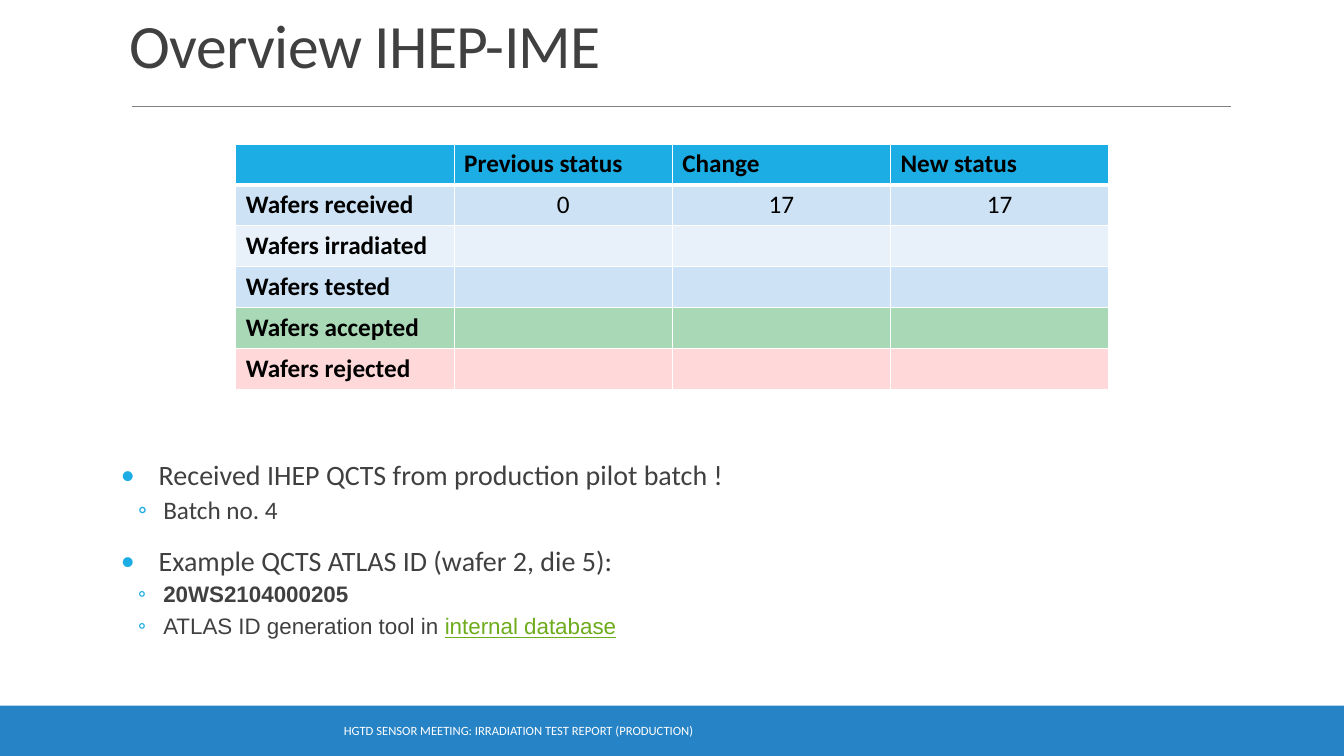
from dataclasses import dataclass

from lxml.etree import SubElement
from pptx import Presentation
from pptx.dml.color import RGBColor
from pptx.enum.shapes import MSO_CONNECTOR, MSO_SHAPE
from pptx.enum.text import MSO_ANCHOR as Anchor, PP_ALIGN as Align
from pptx.oxml.ns import qn
from pptx.util import Pt

WHITE = RGBColor(0xFF, 0xFF, 0xFF)
BLACK = RGBColor(0, 0, 0)
DARK = RGBColor(0x40, 0x40, 0x40)
GREY = RGBColor(0x80, 0x80, 0x80)
FOOTER_BLUE = RGBColor(0x26, 0x83, 0xC6)
ACCENT = RGBColor(0x1C, 0xAD, 0xE4)
BAND_DARK = RGBColor(0xCD, 0xE3, 0xF5)
BAND_LIGHT = RGBColor(0xE8, 0xF1, 0xFA)
ACCEPTED = RGBColor(0xA9, 0xD8, 0xB7)
REJECTED = RGBColor(0xFF, 0xD9, 0xD9)
LINK_GREEN = RGBColor(0x6E, 0xAC, 0x1C)


@dataclass
class Span:
    text: str
    size: float
    font: str = "Calibri"
    color: RGBColor = DARK
    bold: bool = False
    underline: bool = False


@dataclass
class BulletLevel:
    sign: str
    margin: float
    hanging: float
    before: float
    after: float


@dataclass
class Bullet:
    level: int
    spans: list[Span]


@dataclass
class StatusRow:
    texts: list[str]
    fill: RGBColor


LEVELS = [BulletLevel("•", 27, 27, 12, 2), BulletLevel("◦", 30.25, 18, 2, 4)]

BULLETS = [
    Bullet(0, [Span("Received IHEP QCTS from production pilot batch !", 20)]),
    Bullet(1, [Span("Batch no. 4", 18)]),
    Bullet(0, [Span("Example QCTS ATLAS ID (wafer 2, die 5):", 20)]),
    Bullet(1, [Span("20WS2104000205", 16, "Arial", bold=True)]),
    Bullet(1, [
        Span("ATLAS ID generation tool in ", 16, "Arial"),
        Span("internal database", 16, "Arial", LINK_GREEN, underline=True),
    ]),
]

STATUS_ROWS = [
    StatusRow(["", "Previous status", "Change", "New status"], ACCENT),
    StatusRow(["Wafers received", "0", "17", "17"], BAND_DARK),
    StatusRow(["Wafers irradiated", "", "", ""], BAND_LIGHT),
    StatusRow(["Wafers tested", "", "", ""], BAND_DARK),
    StatusRow(["Wafers accepted", "", "", ""], ACCEPTED),
    StatusRow(["Wafers rejected", "", "", ""], REJECTED),
]


def add_span(para, item: Span):
    span = para.add_run()
    span.text = item.text
    font = span.font
    font.name, font.size, font.bold = item.font, Pt(item.size), item.bold
    font.underline = item.underline
    font.color.rgb = item.color
    return span


def add_box(page, left: float, top: float, width: float, height: float, anchor: Anchor):
    box = page.shapes.add_textbox(Pt(left), Pt(top), Pt(width), Pt(height))
    box.text_frame.word_wrap = True
    box.text_frame.vertical_anchor = anchor
    return box.text_frame


def add_bar_and_rule(page) -> None:
    bar = page.shapes.add_shape(MSO_SHAPE.RECTANGLE, Pt(0), Pt(504), Pt(960), Pt(36))
    bar.shadow.inherit = False
    bar.fill.solid()
    bar.fill.fore_color.rgb = FOOTER_BLUE
    bar.line.fill.background()
    rule = page.shapes.add_connector(
        MSO_CONNECTOR.STRAIGHT, Pt(94.3), Pt(75.8), Pt(879), Pt(75.8))
    rule.line.color.rgb = GREY
    rule.line.width = Pt(0.5)
    SubElement(rule._element.spPr, qn("a:effectLst"))


def add_footer(page) -> None:
    para = add_box(page, 87, 507.6, 566.6, 28.8, Anchor.MIDDLE).paragraphs[0]
    para.alignment = Align.CENTER
    add_span(para, Span("HGTD SENSOR MEETING: IRRADIATION TEST REPORT (PRODUCTION)",
                        9, color=WHITE))


def add_title(page) -> None:
    para = add_box(page, 85.7, -53.3, 792, 114.5, Anchor.BOTTOM).paragraphs[0]
    para.line_spacing = 0.85
    title = add_span(para, Span("Overview IHEP-IME", 44))
    title.font._element.set("spc", "-50")


def set_borders(cell, top: float, bottom: float) -> None:
    properties = cell._tc.get_or_add_tcPr()
    for side, width in (("L", 1), ("R", 1), ("T", top), ("B", bottom)):
        border = SubElement(properties, qn(f"a:ln{side}"), w=str(Pt(width)))
        fill = SubElement(border, qn("a:solidFill"))
        SubElement(fill, qn("a:srgbClr"), val=str(WHITE))


def add_status_table(page) -> None:
    rows, columns = len(STATUS_ROWS), len(STATUS_ROWS[0].texts)
    table = page.shapes.add_table(
        rows, columns, Pt(168.5), Pt(102.8), Pt(columns * 155.9), Pt(rows * 29.2)).table
    table.horz_banding = False
    for r, row in enumerate(STATUS_ROWS):
        for c, text in enumerate(row.texts):
            cell = table.cell(r, c)
            set_borders(cell, 3 if r == 1 else 1, 3 if r == 0 else 1)
            cell.fill.solid()
            cell.fill.fore_color.rgb = row.fill
            heading = r == 0 or c == 0
            para = cell.text_frame.paragraphs[0]
            para.alignment = Align.LEFT if heading else Align.CENTER
            if text:
                add_span(para, Span(text, 18, color=BLACK, bold=heading))


def add_bullets(page) -> None:
    frame = add_box(page, 86.4, 326.2, 792, 147.6, Anchor.TOP)
    frame.margin_left = frame.margin_right = 0
    for index, bullet in enumerate(BULLETS):
        para = frame.add_paragraph() if index else frame.paragraphs[0]
        level = LEVELS[bullet.level]
        para.level = bullet.level
        para.line_spacing = 0.9
        para.space_before = Pt(level.before if index else 0)
        para.space_after = Pt(level.after)
        properties = para._p.get_or_add_pPr()
        properties.set("marL", str(Pt(level.margin)))
        properties.set("indent", str(-Pt(level.hanging)))
        color = SubElement(properties, qn("a:buClr"))
        SubElement(color, qn("a:srgbClr"), val=str(ACCENT))
        SubElement(properties, qn("a:buFont"), typeface="Calibri")
        SubElement(properties, qn("a:buChar"), char=level.sign)
        for item in bullet.spans:
            add_span(para, item)


def main() -> None:
    deck = Presentation()
    deck.slide_width, deck.slide_height = Pt(960), Pt(540)
    page = deck.slides.add_slide(deck.slide_layouts[6])
    add_bar_and_rule(page)
    add_footer(page)
    add_title(page)
    add_status_table(page)
    add_bullets(page)
    deck.save("out.pptx")


if __name__ == "__main__":
    main()
